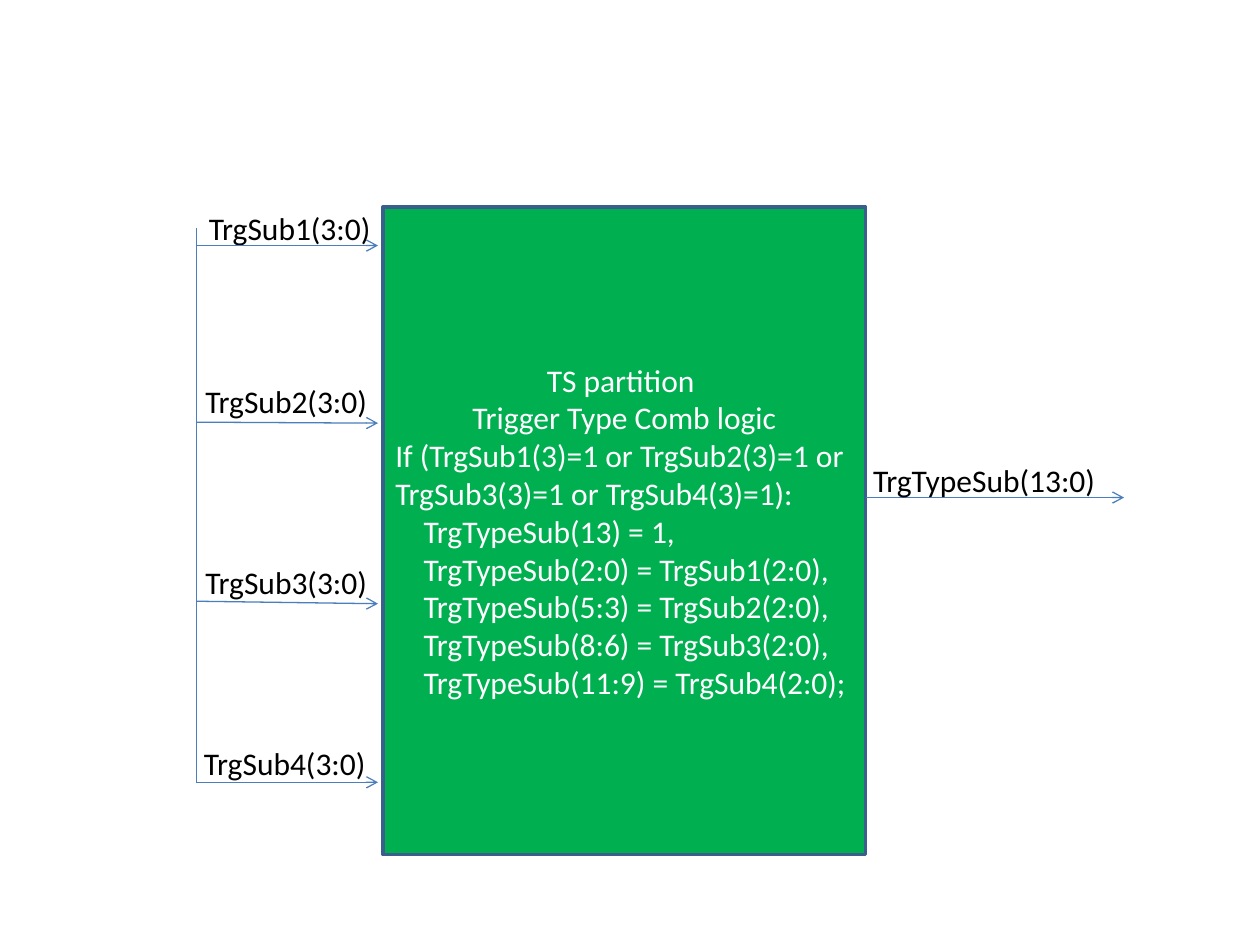
"""Builds the block diagram of the TS partition trigger type logic."""
from pptx import Presentation
from pptx import util as u
from pptx.dml.color import RGBColor
from pptx.enum import shapes, text
from pptx.oxml.ns import qn
from lxml import etree

GREEN = RGBColor(0x00, 0xB0, 0x50)
NAVY = RGBColor(0x3A, 0x5F, 0x8C)
BLUE = RGBColor(0x4B, 0x7E, 0xBC)
WHITE = RGBColor(0xFF, 0xFF, 0xFF)
BLACK = RGBColor(0x00, 0x00, 0x00)

FONT = {"name": "Calibri", "size": u.Pt(18)}
LABEL_FRAME = {"word_wrap": False, "auto_size": text.MSO_AUTO_SIZE.SHAPE_TO_FIT_TEXT}
BLOCK_FRAME = {"word_wrap": True, "vertical_anchor": text.MSO_ANCHOR.MIDDLE}

BUS_X, INPUT_END = 3.96, 7.62
BUS_TOP, BUS_BOTTOM = 4.6, 15.77
INPUTS = [
    ("TrgSub1(3:0)", 3.96, 4.09, 4.95, 4.95),
    ("TrgSub2(3:0)", 3.89, 7.57, 8.51, 8.53),
    ("TrgSub3(3:0)", 3.89, 11.23, 12.12, 12.17),
    ("TrgSub4(3:0)", 3.86, 14.88, BUS_BOTTOM, BUS_BOTTOM),
]
TITLE = ["TS partition ", "Trigger Type Comb logic"]
CONDITION = ["If (TrgSub1(3)=1 or TrgSub2(3)=1 or TrgSub3(3)=1 or TrgSub4(3)=1):"]
ASSIGNMENTS = [
    "TrgTypeSub(13) = 1,",
    "TrgTypeSub(2:0) = TrgSub1(2:0),",
    "TrgTypeSub(5:3) = TrgSub2(2:0),",
    "TrgTypeSub(8:6) = TrgSub3(2:0),",
    "TrgTypeSub(11:9) = TrgSub4(2:0);",
]


def apply(target, values):
    """Set each attribute of the target from a dict."""
    for name, value in values.items():
        setattr(target, name, value)


def write(para, words, color, align=text.PP_ALIGN.LEFT, indent=0):
    """Put one formatted span into a paragraph."""
    para.alignment = align
    if indent:
        para._p.get_or_add_pPr().set("marL", str(u.Cm(indent)))
    span = para.add_run()
    span.text = words
    apply(span.font, FONT)
    span.font.color.rgb = color


def add_label(page, words, left, top, width):
    """Add a signal name."""
    box = page.shapes.add_textbox(u.Cm(left), u.Cm(top), u.Cm(width), u.Cm(1.02))
    apply(box.text_frame, LABEL_FRAME)
    write(box.text_frame.paragraphs[0], words, BLACK)


def add_wire(page, start, end, arrow=True):
    """Add a signal line, with an open arrowhead at its end if wanted."""
    wire = page.shapes.add_connector(
        shapes.MSO_CONNECTOR.STRAIGHT, *map(u.Cm, start + end))
    wire.line.color.rgb = BLUE
    wire.line.width = u.Pt(0.75)
    if arrow:
        etree.SubElement(wire.line._get_or_add_ln(), qn("a:tailEnd"), type="arrow")
    etree.SubElement(wire._element.spPr, qn("a:effectLst"))


def add_logic_block(page):
    """Add the green block with the trigger logic."""
    block = page.shapes.add_shape(
        shapes.MSO_SHAPE.RECTANGLE, u.Cm(7.72), u.Cm(4.17), u.Cm(9.73), u.Cm(13.06))
    block.shadow.inherit = False
    block.fill.solid()
    block.fill.fore_color.rgb = GREEN
    block.line.color.rgb = NAVY
    block.line.width = u.Pt(2)
    frame = block.text_frame
    apply(frame, BLOCK_FRAME)
    groups = [
        (TITLE, {"align": text.PP_ALIGN.CENTER}),
        (CONDITION, {}),
        (ASSIGNMENTS, {"indent": 0.57}),
    ]
    rows = [(words, layout) for group, layout in groups for words in group]
    for number, (words, layout) in enumerate(rows):
        para = frame.add_paragraph() if number else frame.paragraphs[0]
        write(para, words, WHITE, **layout)


def main():
    """Build and save the slide."""
    deck = Presentation()
    apply(deck, {"slide_width": u.Cm(25.4), "slide_height": u.Cm(19.05)})
    page = deck.slides.add_slide(deck.slide_layouts[6])
    add_wire(page, (BUS_X, BUS_TOP), (BUS_X, BUS_BOTTOM), arrow=False)
    add_logic_block(page)
    for words, left, top, start_y, end_y in INPUTS:
        add_label(page, words, left, top, 3.81)
        add_wire(page, (BUS_X, start_y), (INPUT_END, end_y))
    add_wire(page, (17.45, 10.03), (22.66, 10.03))
    add_label(page, "TrgTypeSub(13:0)", 17.35, 9.17, 5.05)
    deck.save("out.pptx")


if __name__ == "__main__":
    main()
